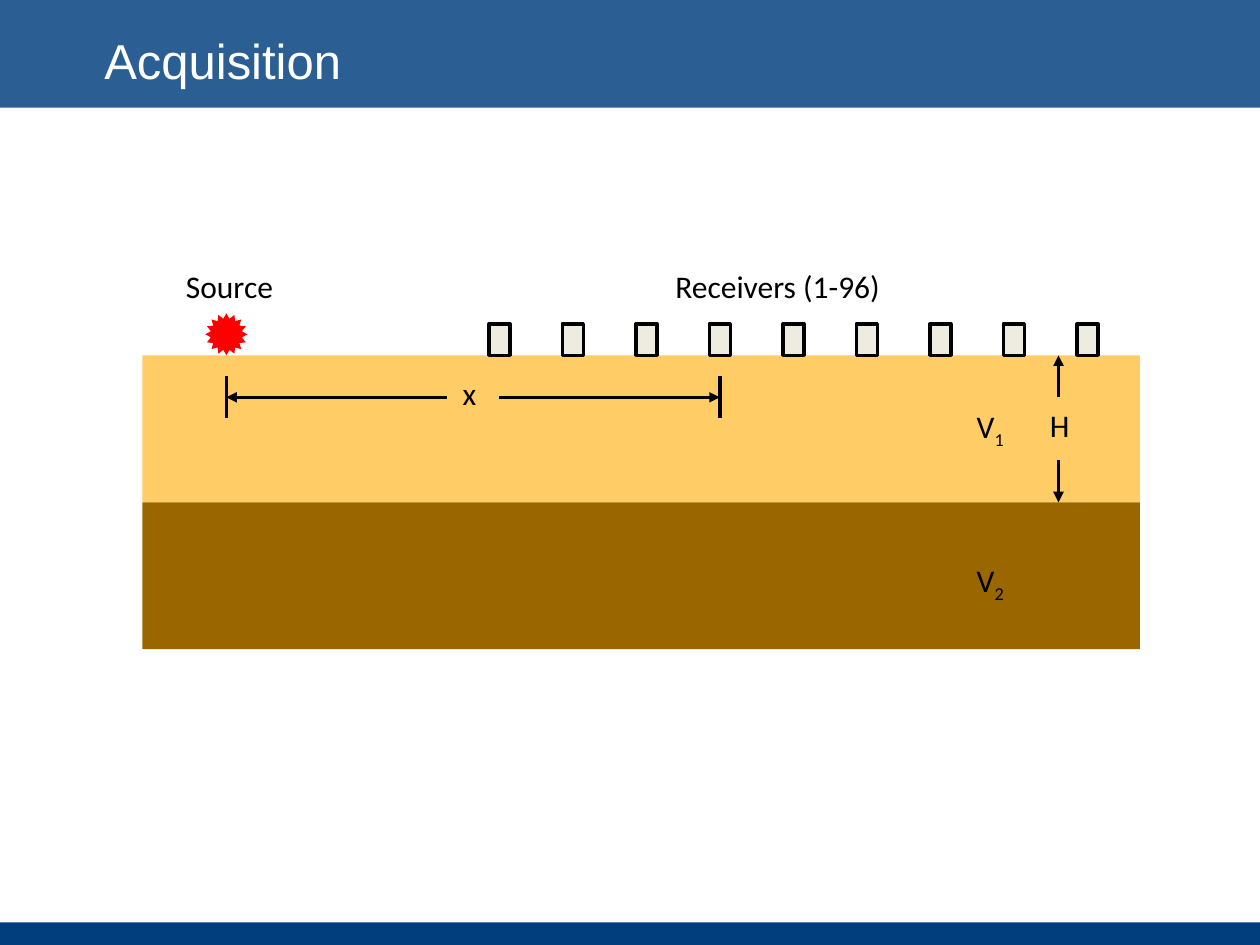
from typing import NamedTuple
from lxml.etree import SubElement
from pptx import Presentation
from pptx.dml.color import RGBColor
from pptx.enum.shapes import MSO_CONNECTOR, MSO_SHAPE
from pptx.enum.text import MSO_ANCHOR, PP_ALIGN
from pptx.oxml.ns import qn
from pptx.util import Inches, Pt

WIDE, HIGH = 10, 7.5
LEFT, TOP, CELL = 1.13, 2.82, 1 / 12
DEPTH, SPAN = 14, 95
NAVY, BLACK, WHITE = "003E7E", "000000", "FFFFFF"


class Box(NamedTuple):
    """A block in inches."""
    x: float
    y: float
    w: float
    h: float


class Block(NamedTuple):
    """A filled shape with an optional outline."""
    box: Box
    fill: str
    edge: bool = False
    kind: MSO_SHAPE = MSO_SHAPE.RECTANGLE


class Label(NamedTuple):
    """A text with an optional subscript."""
    box: Box
    text: str
    sub: str = ""


class Rule(NamedTuple):
    """A line between two grid points."""
    start: tuple[float, float]
    end: tuple[float, float]
    arrow: bool = False


def color(code: str) -> RGBColor:
    """Turn a hex string into a colour."""
    return RGBColor.from_string(code)


def apply(item, values: dict) -> None:
    """Set each named attribute of an item."""
    for name, value in values.items():
        setattr(item, name, value)


def point(col: float, row: float) -> tuple[float, float]:
    """Place a grid point, with row zero at the ground surface."""
    return LEFT + col * CELL, TOP + row * CELL


def cells(col: float, row: float, cols: float, rows: float) -> Box:
    """Place a block of grid cells."""
    return Box(*point(col, row), cols * CELL, rows * CELL)


def share(x: float, y: float, w: float, h: float) -> Box:
    """Place a block by shares of the slide."""
    return Box(x * WIDE, y * HIGH, w * WIDE, h * HIGH)


def draw_block(slide, block: Block):
    """Draw a filled shape."""
    shape = slide.shapes.add_shape(block.kind, *map(Inches, block.box))
    shape.shadow.inherit = False
    shape.fill.solid()
    shape.fill.fore_color.rgb = color(block.fill)
    if block.edge:
        shape.line.color.rgb = color(BLACK)
        shape.line.width = Pt(2)
    else:
        shape.line.fill.background()
    return shape


def draw_rule(slide, rule: Rule) -> None:
    """Draw a line, with a head at its end if asked."""
    ends = [Inches(n) for spot in (rule.start, rule.end) for n in point(*spot)]
    line = slide.shapes.add_connector(MSO_CONNECTOR.STRAIGHT, *ends)
    line.line.color.rgb = color(BLACK)
    line.line.width = Pt(2)
    if rule.arrow:
        SubElement(line.line._get_or_add_ln(), qn("a:tailEnd"), type="triangle")
    SubElement(line._element.spPr, qn("a:effectLst"))


def draw_text(slide, label: Label, font: dict, frame: dict, align: PP_ALIGN, ink: str) -> None:
    """Write a label in its box."""
    body = slide.shapes.add_textbox(*map(Inches, label.box)).text_frame
    apply(body, frame)
    para = body.paragraphs[0]
    para.alignment = align
    for text, base in ((label.text, 0), (label.sub, -25000)):
        if text:
            run = para.add_run()
            run.text = text
            apply(run.font, font)
            run.font.color.rgb = color(ink)
            if base:
                run.font._element.set("baseline", str(base))


def main() -> None:
    """Build the slide."""
    deck = Presentation()
    apply(deck, {"slide_width": Inches(WIDE), "slide_height": Inches(HIGH)})
    slide = deck.slides.add_slide(deck.slide_layouts[6])

    draw_block(slide, Block(share(0, 0.976, 1, 0.024), NAVY))
    band = draw_block(slide, Block(share(0, 0, 1, 0.114), NAVY))
    tint = band._element.spPr.find(".//" + qn("a:srgbClr"))
    SubElement(tint, qn("a:alpha"), val="83000")
    draw_text(slide, Label(share(0.073, 0.025, 0.677, 0.077), "Acquisition"),
              {"name": "Arial", "size": Pt(28)},
              {"word_wrap": True, "vertical_anchor": MSO_ANCHOR.MIDDLE},
              PP_ALIGN.LEFT, WHITE)

    blocks = [Block(cells(0, n * DEPTH, SPAN, DEPTH), fill)
              for n, fill in enumerate(("FFCC66", "996600"))]
    blocks.append(Block(cells(6, -4, 4, 4), "FF0000", kind=MSO_SHAPE.STAR_16_POINT))
    blocks += [Block(cells(33 + 7 * n, -3, 2, 3), "EEECE1", True) for n in range(9)]
    for block in blocks:
        draw_block(slide, block)

    for rule in (
        Rule((29, 4), (8, 4), True),
        Rule((34, 4), (55, 4), True),
        Rule((8, 2), (8, 6)),
        Rule((55, 2), (55, 6)),
        Rule((87.25, 4), (87.25, 0), True),
        Rule((87.25, 10), (87.25, DEPTH), True),
    ):
        draw_rule(slide, rule)

    for label in (
        Label(cells(2.9, -9, 10.8, 4.8), "Source"),
        Label(cells(49.5, -9, 22, 4.8), "Receivers (1-96)"),
        Label(cells(78, 4.3, 5.5, 4.8), "V", "1"),
        Label(cells(78, 19, 5.5, 4.8), "V", "2"),
        Label(cells(28.9, 1.2, 4.5, 6), "x"),
        Label(cells(85.1, 4.2, 4.5, 4.8), "H"),
    ):
        draw_text(slide, label, {"name": "Calibri", "size": Pt(18)},
                  {"word_wrap": False}, PP_ALIGN.CENTER, BLACK)
    deck.save("out.pptx")


if __name__ == "__main__":
    main()
